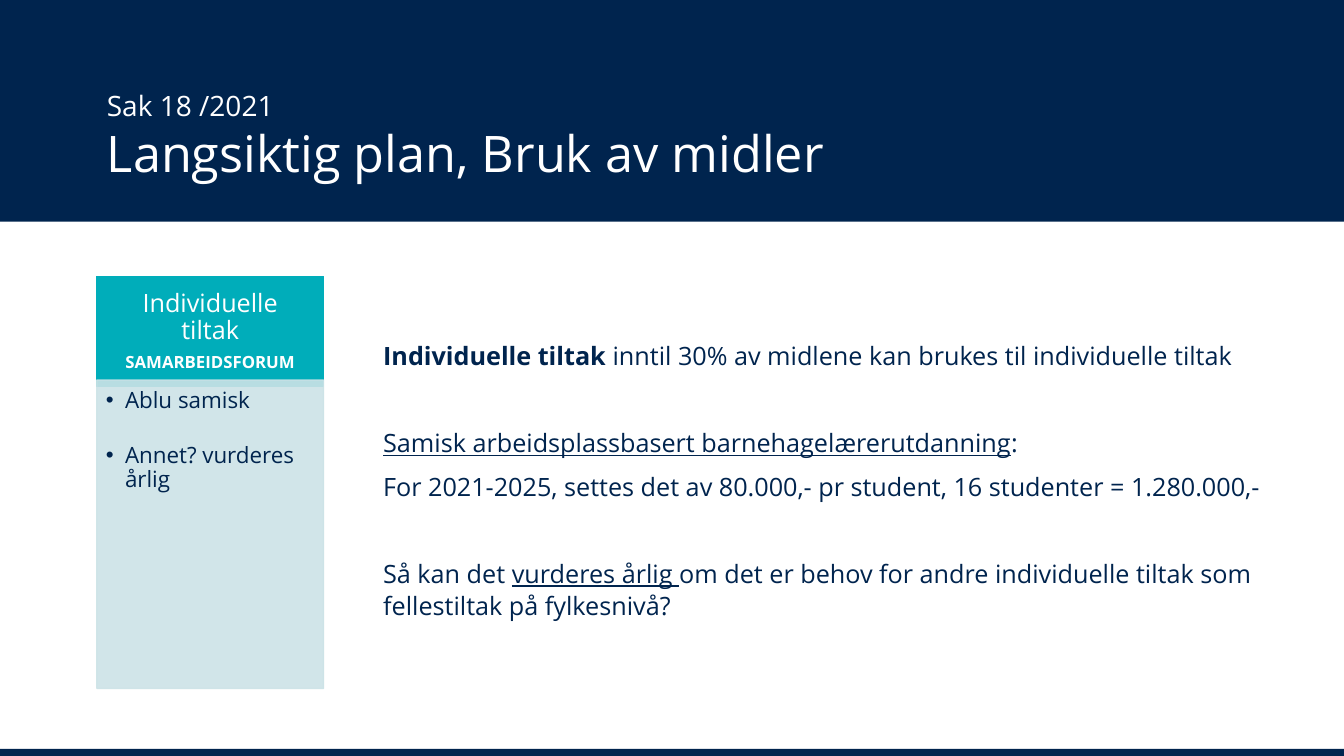
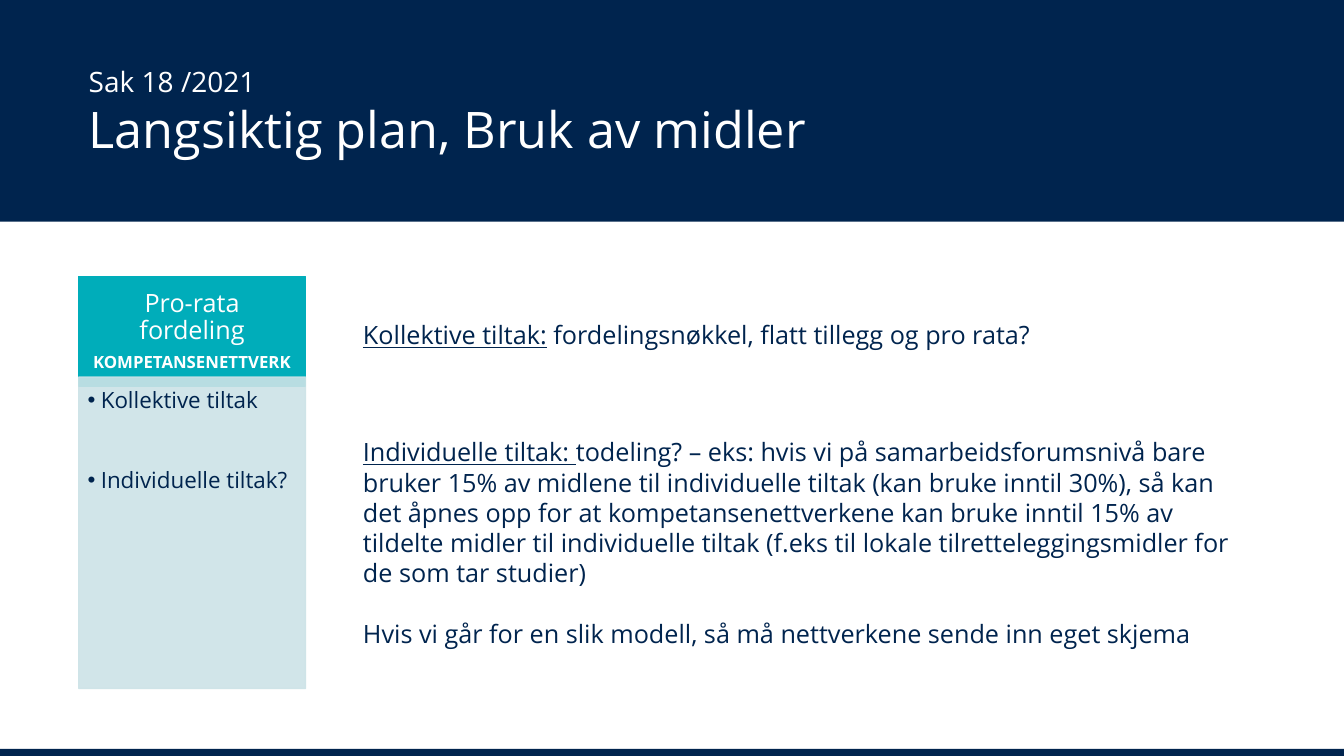
from lxml import etree
from pptx import Presentation
from pptx.dml.color import RGBColor
from pptx.enum.shapes import MSO_SHAPE
from pptx.enum.text import MSO_ANCHOR, MSO_AUTO_SIZE, PP_ALIGN
from pptx.oxml.ns import qn
from pptx.util import Inches, Pt

RECTANGLE = MSO_SHAPE.RECTANGLE
TOP, MIDDLE, BOTTOM = MSO_ANCHOR.TOP, MSO_ANCHOR.MIDDLE, MSO_ANCHOR.BOTTOM
LEFT, CENTER = PP_ALIGN.LEFT, PP_ALIGN.CENTER
NO_AUTOFIT = MSO_AUTO_SIZE.NONE

FONT = "Open Sans"
NAVY, TEAL, PALE, WHITE = "00244E", "00ADBA", "CCE3E7", "FFFFFF"
WIDTH, HEIGHT = 13.33, 7.5
TOP_BAND, BOTTOM_BAND = 2.2, 0.07
PANEL_WIDTH, PANEL_TOP, PANEL_BOTTOM, HEADER_HEIGHT = 2.25, 2.74, 6.83, 1.09
TITLE_WIDTH, TITLE_HEIGHT = 11.02, 1.18
TEXT_INSETS = (0.1, 0.05, 0.1, 0.05)
HEADER_INSETS = (0.14, 0.08, 0.14, 0.08)
LIST_INSETS = (0.09, 0.09, 0.12, 0.14)


def color(value):
    """Turn a hex string into a colour."""
    return RGBColor.from_string(value)


def place(shape, left, top, width, height):
    """Move and size a shape, in inches."""
    shape.left, shape.top = Inches(left), Inches(top)
    shape.width, shape.height = Inches(width), Inches(height)


def paint(shape, fill, opacity=100):
    """Give a shape one colour for fill and outline."""
    shape.fill.solid()
    shape.fill.fore_color.rgb = color(fill)
    shape.line.color.rgb = color(fill)
    shape.line.width = Pt(0.85)
    if opacity < 100:
        for element in shape.element.spPr.iter(qn("a:srgbClr")):
            etree.SubElement(element, qn("a:alpha"), val=str(opacity * 1000))


def add_rectangle(slide, fill, left, top, width, height):
    """Add a flat rectangle."""
    shape = slide.shapes.add_shape(RECTANGLE, *map(Inches, (left, top, width, height)))
    shape.shadow.inherit = False
    paint(shape, fill)
    return shape


def send_to_back(shape, owner):
    """Put a shape behind everything else on a slide or layout."""
    owner.shapes.element.insert(2, shape.element)


def prepare_frame(shape, anchor, insets=TEXT_INSETS):
    """Set wrapping, anchor and insets, and return the text frame."""
    frame = shape.text_frame
    frame.word_wrap = True
    frame.auto_size = NO_AUTOFIT
    frame.vertical_anchor = anchor
    frame.margin_left, frame.margin_top, frame.margin_right, frame.margin_bottom = map(Inches, insets)
    return frame


def add_run(paragraph, text, size, fill, bold=False, underline=False):
    """Add one formatted run."""
    run = paragraph.add_run()
    run.text = text
    font = run.font
    font.name, font.size, font.bold, font.underline = FONT, Pt(size), bold, underline
    font.color.rgb = color(fill)


def set_bullet(paragraph, indent):
    """Set a hanging bullet, or none when the indent is zero."""
    properties = paragraph._p.get_or_add_pPr()
    properties.set("marL", str(Inches(indent)))
    properties.set("indent", str(-Inches(indent)))
    if indent:
        etree.SubElement(properties, qn("a:buFont"), typeface="Arial")
        etree.SubElement(properties, qn("a:buChar"), char="•")
    else:
        etree.SubElement(properties, qn("a:buNone"))


def add_paragraph(frame, gap, spacing, align=LEFT, indent=0):
    """Start a paragraph, with a gap above all but the first."""
    first = not frame.paragraphs[0].runs
    paragraph = frame.paragraphs[0] if first else frame.add_paragraph()
    set_bullet(paragraph, indent)
    paragraph.alignment = align
    paragraph.line_spacing = spacing
    paragraph.space_before = Pt(0 if first else gap)
    paragraph.space_after = Pt(0)
    return paragraph


def add_bands(slide):
    """Build the navy bands and hand them to the shared layout."""
    for top, height in ((0, TOP_BAND), (HEIGHT - BOTTOM_BAND, BOTTOM_BAND)):
        band = add_rectangle(slide, NAVY, 0, top, WIDTH, height)
        band.line.fill.background()
        send_to_back(band, slide.slide_layout)


def fill_title(slide, left, top):
    """Write the case number and the heading."""
    title = slide.shapes.title
    place(title, left, top, TITLE_WIDTH, TITLE_HEIGHT)
    paragraph = add_paragraph(prepare_frame(title, BOTTOM), 0, 1.0)
    add_run(paragraph, "Sak 18 /2021", 20, WHITE)
    paragraph.add_line_break()
    add_run(paragraph, "Langsiktig plan, Bruk av midler", 36, WHITE)


def add_header(slide, left, heading, level):
    """Add the teal panel header."""
    header = add_rectangle(slide, TEAL, left, PANEL_TOP, PANEL_WIDTH, HEADER_HEIGHT)
    send_to_back(header, slide)
    frame = prepare_frame(header, MIDDLE, HEADER_INSETS)
    for text, size, bold in ((heading, 18, False), (level, 12, True)):
        add_run(add_paragraph(frame, 6, 0.9, CENTER), text, size, WHITE, bold)


def fill_list(slide, left, top, items, gap, spacing, indent):
    """Fill the pale panel with bullets."""
    panel = slide.placeholders[1]
    place(panel, left, top, PANEL_WIDTH, PANEL_BOTTOM - top)
    paint(panel, PALE, 90)
    frame = prepare_frame(panel, TOP, LIST_INSETS)
    for item in items:
        add_run(add_paragraph(frame, gap, spacing, indent=indent), item, 16, NAVY)


def fill_body(slide, box, paragraphs, spacing):
    """Write body paragraphs, each a gap and its (text, style) runs."""
    body = slide.placeholders[2]
    place(body, *box)
    frame = prepare_frame(body, TOP)
    for gap, runs in paragraphs:
        paragraph = add_paragraph(frame, gap, spacing)
        for text, style in runs:
            add_run(paragraph, text, 18, NAVY, style == "bold", style == "underline")


def build_individual_measures(slide):
    """Build the slide on individual measures."""
    left = 0.96
    fill_title(slide, left, 0.68)
    add_header(slide, left, "Individuelle tiltak", "SAMARBEIDSFORUM")
    fill_list(slide, left, 3.77, ("Ablu samisk", "Annet? vurderes årlig"), 22, 0.9, 0.19)
    fill_body(slide, (3.7, 3.31, 9.27, 2.91), (
        (0, (("Individuelle tiltak ", "bold"),
             ("inntil 30% av midlene kan brukes til individuelle tiltak", ""))),
        (39, (("Samisk arbeidsplassbasert barnehagelærerutdanning", "underline"), (":", ""))),
        (8, (("For 2021-2025, settes det av 80.000,- pr student, 16 studenter = 1.280.000,-", ""),)),
        (39, (("Så kan det ", ""), ("vurderes årlig ", "underline"),
              ("om det er behov for andre individuelle tiltak som fellestiltak på fylkesnivå?", ""))),
    ), 1.07)


def build_pro_rata(slide):
    """Build the slide on pro rata distribution."""
    left = 0.78
    fill_title(slide, left, 0.44)
    add_header(slide, left, "Pro-rata fordeling", "KOMPETANSENETTVERK")
    fill_list(slide, left, 3.74, ("Kollektive tiltak", "Individuelle tiltak?"), 38, 1.0, 0.13)
    fill_body(slide, (3.5, 3.12, 9.05, 3.38), (
        (0, (("Kollektive tiltak:", "underline"),
             (" fordelingsnøkkel, flatt tillegg og pro rata?", ""))),
        (62, (("Individuelle tiltak: ", "underline"),
              ("todeling? – eks: hvis vi på samarbeidsforumsnivå bare bruker 15% av midlene til "
               "individuelle tiltak (kan bruke inntil 30%), så kan det åpnes opp for at "
               "kompetansenettverkene kan bruke inntil 15% av tildelte midler til individuelle "
               "tiltak (f.eks til lokale tilretteleggingsmidler for de som tar studier)", ""))),
        (22, (("Hvis vi går for en slik modell, så må nettverkene sende inn eget skjema", ""),)),
    ), 1.0)


def main():
    """Build and save the presentation."""
    presentation = Presentation()
    presentation.slide_width, presentation.slide_height = Inches(WIDTH), Inches(HEIGHT)
    layout = presentation.slide_layouts.get_by_name("Two Content")
    builders = (build_individual_measures, build_pro_rata)
    slides = [presentation.slides.add_slide(layout) for _ in builders]
    add_bands(slides[0])
    for build, slide in zip(builders, slides):
        build(slide)
    presentation.save("out.pptx")


if __name__ == "__main__":
    main()
